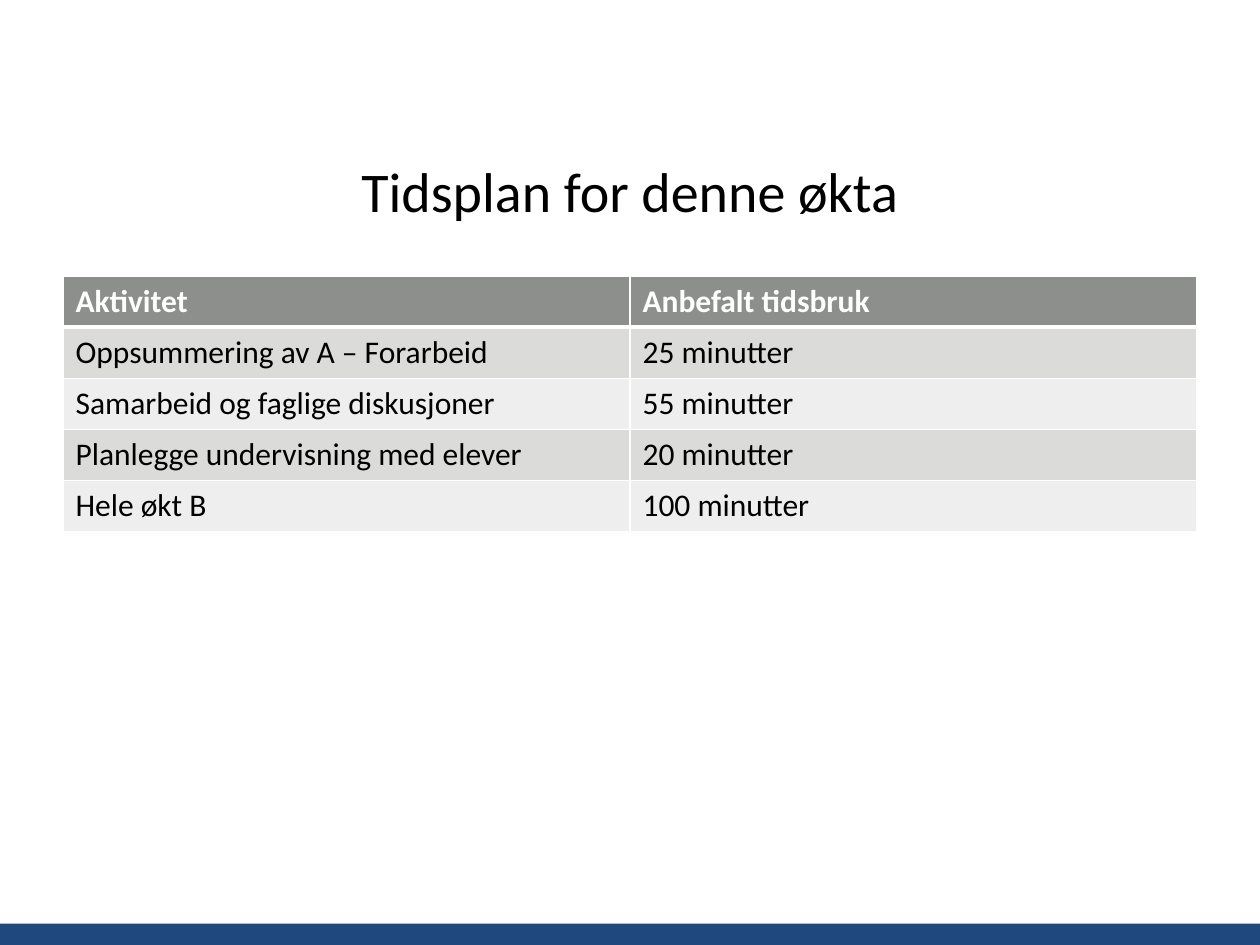
from lxml import etree
from pptx import Presentation
from pptx.dml.color import RGBColor
from pptx.enum.shapes import MSO_SHAPE
from pptx.enum.text import MSO_ANCHOR, PP_ALIGN
from pptx.oxml.ns import qn
from pptx.util import Inches, Pt

RECTANGLE = MSO_SHAPE.RECTANGLE
MIDDLE = MSO_ANCHOR.MIDDLE
CENTER = PP_ALIGN.CENTER
TITLE_ONLY = 5

WHITE, BLACK, BLUE = "FFFFFF", "000000", "1F487E"
HEADER_FILL, BAND_FILLS = "8D8F8C", ["DBDBDA", "EEEEEE"]

ROWS = [
    ("Aktivitet", "Anbefalt tidsbruk"),
    ("Oppsummering av A – Forarbeid", "25 minutter"),
    ("Samarbeid og faglige diskusjoner", "55 minutter"),
    ("Planlegge undervisning med elever", "20 minutter"),
    ("Hele økt B", "100 minutter"),
]


def color(value):
    return RGBColor.from_string(value)


def format_text(paragraph, text, text_color, **values):
    paragraph.text = text
    font = paragraph.font
    font.color.rgb = color(text_color)
    for name, value in {"name": "Calibri", **values}.items():
        setattr(font, name, value)


presentation = Presentation()
presentation.slide_width = Inches(10)
presentation.slide_height = Inches(7.5)
slide = presentation.slides.add_slide(presentation.slide_layouts[TITLE_ONLY])
slide.background.fill.solid()
slide.background.fill.fore_color.rgb = color(WHITE)

# Bottom bar
bar = slide.shapes.add_shape(RECTANGLE, 0, Inches(7.33), Inches(10), Inches(0.17))
bar.shadow.inherit = False
bar.fill.solid()
bar.fill.fore_color.rgb = color(BLUE)
bar.line.fill.background()

# Title
title = slide.shapes.title
title_place = {"left": 0.5, "top": 1, "width": 9, "height": 1.01}
for name, value in title_place.items():
    setattr(title, name, Inches(value))
title.text_frame.vertical_anchor = MIDDLE
title_paragraph = title.text_frame.paragraphs[0]
title_paragraph.alignment = CENTER
format_text(title_paragraph, "Tidsplan for denne økta", BLACK, size=Pt(32))

# Schedule table
table = slide.shapes.add_table(
    len(ROWS), 2, Inches(0.5), Inches(2.19), Inches(9), Inches(2.03)
).table
for row_index, row in enumerate(ROWS):
    is_header = row_index == 0
    fill = HEADER_FILL if is_header else BAND_FILLS[(row_index - 1) % 2]
    # The rule between header and body is thicker than the rest
    border_widths = {
        "a:lnL": 1,
        "a:lnR": 1,
        "a:lnT": 3 if row_index == 1 else 1,
        "a:lnB": 3 if is_header else 1,
    }
    for column_index, text in enumerate(row):
        cell = table.cell(row_index, column_index)
        cell.fill.solid()
        cell.fill.fore_color.rgb = color(fill)
        format_text(cell.text_frame.paragraphs[0], text,
                    WHITE if is_header else BLACK, size=Pt(18), bold=is_header)
        properties = cell._tc.get_or_add_tcPr()
        for position, (tag, width) in enumerate(border_widths.items()):
            line = etree.Element(qn(tag), w=str(Pt(width)))
            line_fill = etree.SubElement(line, qn("a:solidFill"))
            etree.SubElement(line_fill, qn("a:srgbClr"), val=WHITE)
            properties.insert(position, line)

presentation.save("out.pptx")
